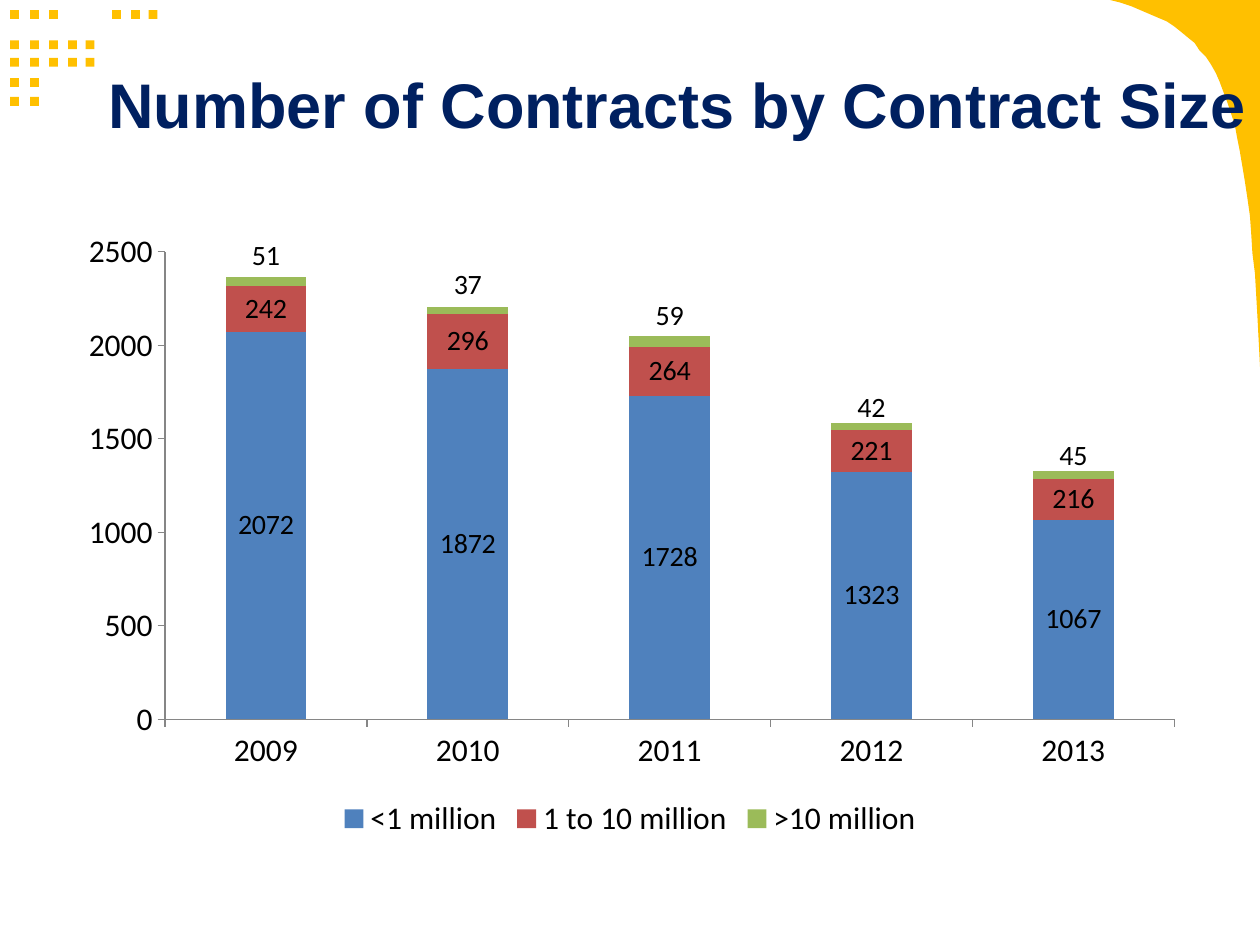
import lxml.etree
import pptx
import pptx.chart.data
import pptx.dml.color
import pptx.enum.chart
import pptx.enum.shapes
import pptx.enum.text
import pptx.oxml.ns
import pptx.util

Inches = pptx.util.Inches
Pt = pptx.util.Pt
enum = pptx.enum.chart
qn = pptx.oxml.ns.qn

HUES = {"gold": "FFC000", "navy": "002060", "black": "000000", "grey": "868686",
        "blue": "4F81BD", "red": "C0504D", "green": "9BBB59"}

COLS = [0.08, 0.24, 0.39, 0.54, 0.68]
ROWS = {0.08: COLS[:3] + [0.89, 1.04, 1.18], 0.32: COLS, 0.46: COLS,
        0.62: COLS[:2], 0.77: COLS[:2]}

CURVE = [(8.81, 0), (10, 0), (10, 2.91), (9.99, 2.71), (9.98, 2.52), (9.97, 2.34),
         (9.96, 2.17), (9.94, 2.01), (9.93, 1.85), (9.92, 1.71), (9.9, 1.57),
         (9.88, 1.44), (9.86, 1.32), (9.84, 1.2), (9.82, 1.1), (9.8, 0.99),
         (9.77, 0.9), (9.74, 0.81), (9.71, 0.73), (9.68, 0.65), (9.65, 0.58),
         (9.61, 0.51), (9.57, 0.45), (9.52, 0.4), (9.48, 0.34), (9.43, 0.3),
         (9.37, 0.25), (9.32, 0.21), (9.26, 0.17), (9.19, 0.14), (9.12, 0.11),
         (9.05, 0.08), (8.98, 0.05), (8.89, 0.02)]

YEARS = ["2009", "2010", "2011", "2012", "2013"]
SIZES = [("<1 million", "blue", [2072, 1872, 1728, 1323, 1067]),
         ("1 to 10 million", "red", [242, 296, 264, 221, 216]),
         (">10 million", "green", [51, 37, 59, 42, 45])]
LIFTS = [-0.04, -0.04, -0.04, -0.03, -0.03]


class Deck:
    """Holds the style and the current slide, and draws each kind of element."""

    def __init__(self, prs):
        self.slide = prs.slides.add_slide(prs.slide_layouts[6])
        self.shapes = self.slide.shapes

    def apply(self, item, **values):
        for name, value in values.items():
            setattr(item, name, value)

    def hue(self, name):
        return pptx.dml.color.RGBColor.from_string(HUES[name])

    def font(self, font, face, size, hue, bold=False):
        self.apply(font, name=face, size=Pt(size), bold=bold)
        font.color.rgb = self.hue(hue)

    def paint(self, shape, hue):
        shape.shadow.inherit = False
        shape.fill.solid()
        shape.fill.fore_color.rgb = self.hue(hue)
        shape.line.fill.background()

    def dot(self, left, top, side=0.07):
        kind = pptx.enum.shapes.MSO_SHAPE.RECTANGLE
        box = map(Inches, (left, top, side, side))
        self.paint(self.shapes.add_shape(kind, *box), "gold")

    def curve(self, points):
        first, *rest = [(Inches(x), Inches(y)) for x, y in points]
        path = self.shapes.build_freeform(*first)
        path.add_line_segments(rest, close=True)
        self.paint(path.convert_to_shape(), "gold")

    def title(self, text, *box):
        frame = self.shapes.add_textbox(*map(Inches, box)).text_frame
        self.apply(frame, word_wrap=True, margin_left=0, margin_right=0,
                   margin_top=Inches(0.1),
                   vertical_anchor=pptx.enum.text.MSO_ANCHOR.TOP)
        para = frame.paragraphs[0]
        self.apply(para, text=text, alignment=pptx.enum.text.PP_ALIGN.CENTER)
        self.font(para.runs[0].font, "Arial", 36, "navy", True)

    def layout(self, **values):
        root = lxml.etree.Element(qn("c:layout"))
        part = lxml.etree.SubElement(root, qn("c:manualLayout"))
        for name, value in values.items():
            lxml.etree.SubElement(part, qn("c:" + name)).set("val", str(value))
        return root

    def axis(self, axis):
        self.apply(axis, has_major_gridlines=False,
                   major_tick_mark=enum.XL_TICK_MARK.OUTSIDE,
                   minor_tick_mark=enum.XL_TICK_MARK.NONE)
        axis.format.line.color.rgb = self.hue("grey")
        axis.format.line.width = Pt(0.75)

    def chart(self, years, sizes, lifts, *box):
        data = pptx.chart.data.CategoryChartData()
        data.categories = years
        for name, _, counts in sizes:
            data.add_series(name, counts)
        kind = enum.XL_CHART_TYPE.COLUMN_STACKED
        chart = self.shapes.add_chart(kind, *map(Inches, box), data).chart
        self.apply(chart, has_title=False, has_legend=True)
        self.font(chart.font, "Calibri", 18, "black")
        self.apply(chart.legend, include_in_layout=False,
                   position=enum.XL_LEGEND_POSITION.BOTTOM)
        self.axis(chart.category_axis)
        self.axis(chart.value_axis)
        self.apply(chart.value_axis, minimum_scale=0, maximum_scale=2500, major_unit=500)
        plot = chart.plots[0]
        self.apply(plot, gap_width=150, overlap=100, vary_by_categories=False)
        for bar, (_, hue, _) in zip(plot.series, sizes):
            bar.format.fill.solid()
            bar.format.fill.fore_color.rgb = self.hue(hue)
            self.apply(bar.data_labels, show_value=True,
                       position=enum.XL_LABEL_POSITION.CENTER)
            self.font(bar.data_labels.font, "Calibri", 16, "black")
        for spot, lift in enumerate(lifts):
            label = bar.points[spot].data_label
            self.font(label.font, "Calibri", 16, "black")
            mark = bar.data_labels._element.findall(qn("c:dLbl"))[spot]
            mark.find(qn("c:idx")).addnext(self.layout(x=0, y=lift))
        area = chart._chartSpace.find(".//" + qn("c:plotArea"))
        for old in area.findall(qn("c:layout")):
            area.remove(old)
        area.insert(0, self.layout(layoutTarget="inner", xMode="edge", yMode="edge",
                                   x=0.09, y=0.05, w=0.89, h=0.75))


def main():
    prs = pptx.Presentation()
    prs.slide_width, prs.slide_height = Inches(10), Inches(7.5)
    deck = Deck(prs)
    for top, lefts in ROWS.items():
        for left in lefts:
            deck.dot(left, top)
    deck.curve(CURVE)
    deck.title("Number of Contracts by Contract Size", 0.75, 0.42, 9.25, 1.25)
    deck.chart(YEARS, SIZES, LIFTS, 0.5, 1.75, 9, 4.95)
    prs.save("out.pptx")


if __name__ == "__main__":
    main()
